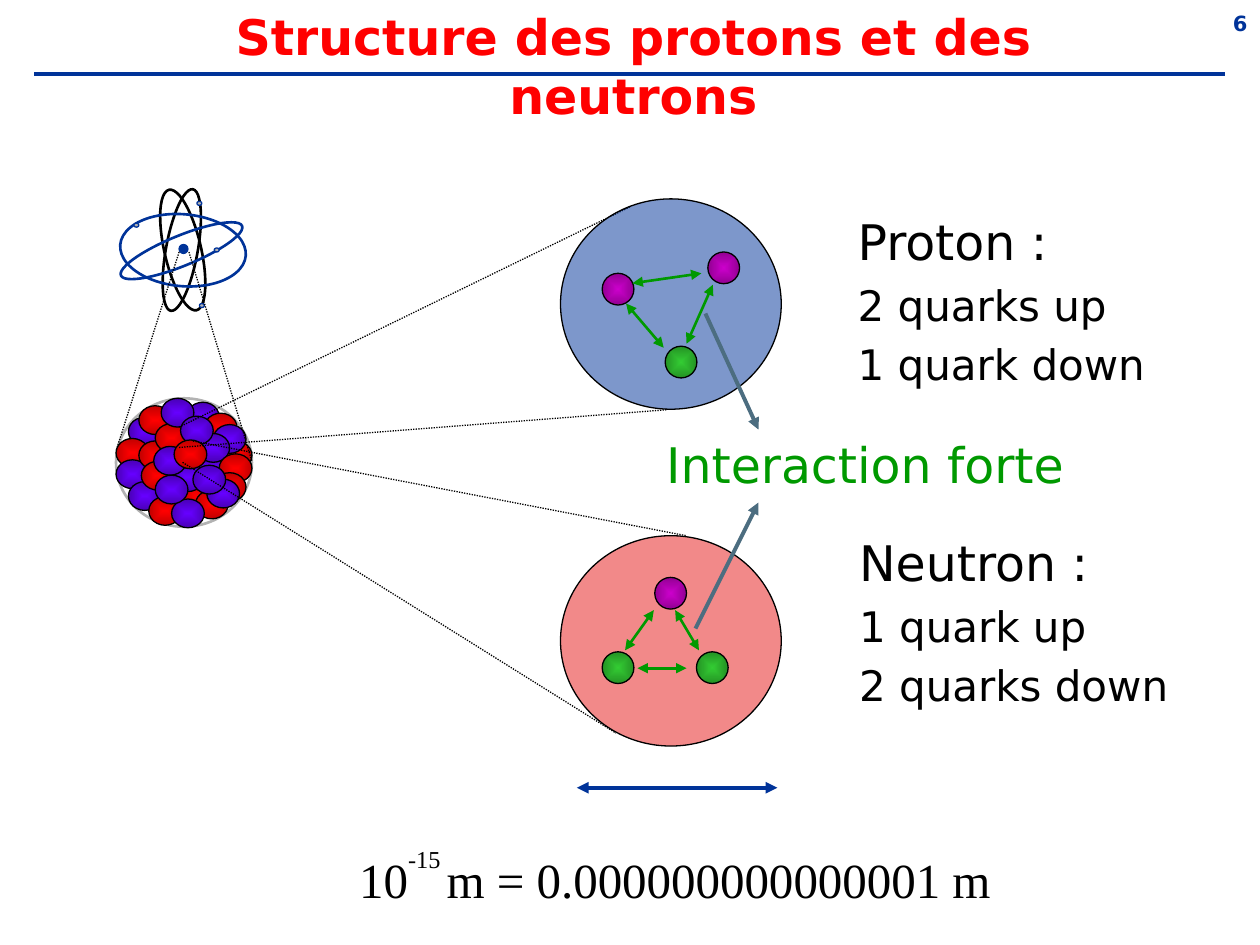
from pptx import Presentation
from pptx.dml.color import RGBColor
from pptx.enum.dml import MSO_LINE
from pptx.enum.shapes import MSO_CONNECTOR, MSO_SHAPE
from pptx.enum.text import MSO_ANCHOR, MSO_AUTO_SIZE, PP_ALIGN
from pptx.oxml import parse_xml
from pptx.oxml.ns import nsdecls, qn
from pptx.util import Cm, Pt

OVAL = MSO_SHAPE.OVAL
STRAIGHT = MSO_CONNECTOR.STRAIGHT
DOTTED = MSO_LINE.ROUND_DOT
TOP, BOTTOM = MSO_ANCHOR.TOP, MSO_ANCHOR.BOTTOM
LEFT, CENTER, RIGHT = PP_ALIGN.LEFT, PP_ALIGN.CENTER, PP_ALIGN.RIGHT
TITLE_ONLY = 5

SANS, SERIF = "DejaVu Sans", "Times New Roman"
BLACK, BLUE, GREY, RED = "000000", "003399", "B2B2B2", "FF0000"
GREEN, SLATE = "009900", "4C6D80"

# Centre and edge colours of the shaded balls
BALLS = {
    "proton": ("6600FF", "4900B6"),
    "neutron": (RED, "C10000"),
    "up": ("CC00CC", "920092"),
    "down": ("33CC33", "249224"),
}
# Balls of the nucleus from back to front, relative to its box
NUCLEONS = [
    ("proton", 0.25, 0.38), ("neutron", 0, 0.81), ("proton", 0, 1.24),
    ("proton", 1.57, 1.17), ("proton", 1.42, 0.08), ("neutron", 0.46, 0.15),
    ("neutron", 0.46, 0.86), ("neutron", 1.32, 1.68), ("neutron", 1.63, 0.46),
    ("neutron", 0.79, 0.51), ("neutron", 2.08, 0.86), ("neutron", 1.78, 0.3),
    ("proton", 0.91, 0), ("proton", 1.96, 0.53), ("proton", 0.25, 1.68),
    ("proton", 1.63, 0.71), ("neutron", 0.51, 1.27), ("neutron", 1.6, 1.85),
    ("neutron", 0.66, 1.98), ("proton", 1.12, 1.3), ("proton", 1.12, 2.03),
    ("proton", 0.76, 0.97), ("neutron", 2.08, 1.12), ("neutron", 1.96, 1.5),
    ("proton", 1.83, 1.63), ("proton", 1.55, 1.35), ("proton", 1.3, 0.36),
    ("proton", 0.79, 1.55), ("neutron", 1.17, 0.84),
]


def color(hex_string):
    return RGBColor.from_string(hex_string)


def add_text(paragraph, text, size=28, font=SANS, fill=BLACK, bold=False, baseline=None):
    run = paragraph.add_run()
    run.text = text
    run.font.size, run.font.name, run.font.bold = Pt(size), font, bold
    run.font.color.rgb = color(fill)
    if baseline:
        run.font._element.set("baseline", str(baseline * 1000))


def add_box(slide, left, top, width, height, lines, align=LEFT, anchor=TOP, **text_format):
    """Text box with one paragraph for each (text, size) pair."""
    shape = slide.shapes.add_textbox(Cm(left), Cm(top), Cm(width), Cm(height))
    frame = shape.text_frame
    frame.word_wrap, frame.vertical_anchor = True, anchor
    for index, (text, size) in enumerate(lines):
        paragraph = frame.add_paragraph() if index else frame.paragraphs[0]
        paragraph.alignment = align
        paragraph.space_before = Pt(5 if index else 0)
        add_text(paragraph, text, size=size, **text_format)
    return frame


def add_oval(slide, left, top, width, height, line=BLACK, weight=0.75, fill=None, opacity=100, rotation=0):
    shape = slide.shapes.add_shape(OVAL, Cm(left), Cm(top), Cm(width), Cm(height))
    shape.shadow.inherit = False
    shape.rotation = rotation
    shape.line.color.rgb, shape.line.width = color(line), Pt(weight)
    if fill is None:
        shape.fill.background()
    else:
        shape.fill.solid()
        shape.fill.fore_color.rgb = color(fill)
    if opacity < 100:
        tint = shape._element.spPr.find(qn("a:solidFill"))[0]
        tint.append(parse_xml(f'<a:alpha {nsdecls("a")} val="{opacity * 1000}"/>'))
    return shape


def add_ball(slide, kind, left, top, width, height):
    """Oval shaded from its centre outwards."""
    shape = add_oval(slide, left, top, width, height)
    shape.fill.gradient()
    for stop, shade in zip(shape.fill.gradient_stops, BALLS[kind]):
        stop.color.rgb = color(shade)
    gradient = shape._element.spPr.find(qn("a:gradFill"))
    gradient.replace(gradient.find(qn("a:lin")), parse_xml(
        f'<a:path {nsdecls("a")} path="shape">'
        '<a:fillToRect l="50000" t="50000" r="50000" b="50000"/></a:path>'))


def add_line(slide, left, top, ends, line=BLACK, weight=0.75, dash=None, arrows=()):
    """Straight line; ends are x1, y1, x2, y2 relative to left and top."""
    x1, y1, x2, y2 = ends
    connector = slide.shapes.add_connector(
        STRAIGHT, Cm(left + x1), Cm(top + y1), Cm(left + x2), Cm(top + y2))
    connector.line.color.rgb, connector.line.width = color(line), Pt(weight)
    if dash:
        connector.line.dash_style = dash
    properties = connector._element.spPr
    for end in arrows:
        properties.find(qn("a:ln")).append(
            parse_xml(f'<a:{end} {nsdecls("a")} type="triangle"/>'))
    properties.append(parse_xml(f'<a:effectLst {nsdecls("a")}/>'))


def draw_header(slide, left, top, width, height):
    # Rule, page number and title
    add_line(slide, left, top, (0.69, 1.5, 24.69, 1.5), line=BLUE, weight=2.25)
    add_box(slide, left + width - 2.34, top, 2.34, 0.84, [("6", 12)],
            align=RIGHT, anchor=BOTTOM, fill=BLUE, bold=True)
    title = slide.shapes.title
    title.left, title.top = Cm(left + 1.93), Cm(top)
    title.width, title.height = Cm(21.67), Cm(height)
    frame = title.text_frame
    frame.word_wrap, frame.auto_size = True, MSO_AUTO_SIZE.NONE
    frame.vertical_anchor = TOP
    frame.margin_left = frame.margin_right = Cm(0.3)
    frame.paragraphs[0].alignment = CENTER
    add_text(frame.paragraphs[0], "Structure des protons et des neutrons", fill=RED, bold=True)


def draw_nucleus(slide, left, top, width, height):
    add_oval(slide, left, top, width, height, line=GREY, weight=1.5)
    for kind, x, y in NUCLEONS:
        add_ball(slide, kind, left + x, top + y, 0.66, 0.58)


def draw_atom(slide, left, top):
    # Orbits, nucleus and electrons
    for x, y, width, height, rotation, line in [
            (0.08, 0.91, 2.49, 0.64, 280.3, BLACK), (0.1, 0.86, 2.49, 0.74, 257.1, BLACK),
            (0, 0.94, 2.64, 0.61, 337.8, BLUE), (0.08, 0.51, 2.54, 1.45, 5.1, BLUE)]:
        add_oval(slide, left + x, top + y, width, height, line=line, weight=1.5, rotation=rotation)
    add_oval(slide, left + 1.27, top + 1.12, 0.18, 0.18, line=BLUE, fill=BLUE)
    for x, y in [(1.63, 0.25), (1.98, 1.19), (0.36, 0.69), (1.68, 2.31)]:
        add_oval(slide, left + x, top + y, 0.1, 0.08, line=BLUE, fill=GREY)


def draw_zoom_lines(slide, left, top):
    # Atom to nucleus, then nucleus to neutron and proton
    for ends in [(1.27, 0.91, 0, 4.92), (1.47, 0.91, 2.74, 5.13),
                 (1.34, 5.15, 10.08, 10.61), (1.55, 4.72, 11.5, 6.63),
                 (1.27, 4.85, 11.1, 4.09), (1.27, 4.44, 10.36, 0)]:
        add_line(slide, left, top, ends, dash=DOTTED)


def draw_hadron(slide, left, top, width, height, fill, quarks, forces):
    add_oval(slide, left, top, width, height, fill=fill, opacity=51)
    for kind, x, y in quarks:
        add_ball(slide, kind, left + x, top + y, 0.64, 0.64)
    for ends in forces:
        add_line(slide, left, top, ends, line=GREEN, weight=1.5, arrows=("headEnd", "tailEnd"))


def draw_interaction(slide, left, top, width, height):
    for ends in [(1.04, -2.32, 2.11, 0.02), (0.84, 4.03, 2.11, 1.49)]:
        add_line(slide, left, top, ends, line=SLATE, weight=2.25, arrows=("tailEnd",))
    add_box(slide, left, top, width, height, [("Interaction forte", 28)], fill=GREEN)


def draw_scale(slide, left, top, width, height):
    # Size arrow and its length
    add_line(slide, left, top, (8.68, 0, 4.64, 0), line=BLUE, weight=2.25,
             arrows=("headEnd", "tailEnd"))
    frame = add_box(slide, left, top + 0.43, width, height - 0.43, [("10", 28)], font=SERIF)
    paragraph = frame.paragraphs[0]
    paragraph.line_spacing = 1.45
    add_text(paragraph, "-15 ", size=24, font=SERIF, baseline=72)
    add_text(paragraph, "m = 0.000000000000001 m", font=SERIF)


def main():
    presentation = Presentation()
    presentation.slide_width, presentation.slide_height = Cm(25.4), Cm(19.05)
    slide = presentation.slides.add_slide(presentation.slide_layouts[TITLE_ONLY])
    draw_header(slide, 0, 0, 25.4, 1.45)
    draw_nucleus(slide, 2.34, 8.03, 2.74, 2.59)
    draw_atom(slide, 2.34, 3.81)
    draw_zoom_lines(slide, 2.34, 4.17)
    draw_hadron(slide, 11.3, 4.01, 4.45, 4.24, BLUE,
                [("down", 2.11, 2.97), ("up", 2.97, 1.07), ("up", 0.84, 1.5)],
                [(1.32, 2.11, 2.08, 3), (2.54, 2.92, 3.07, 1.73), (1.45, 1.7, 2.84, 1.5)])
    draw_hadron(slide, 11.3, 10.8, 4.45, 4.24, "E71919",
                [("down", 0.84, 2.34), ("down", 2.74, 2.34), ("up", 1.9, 0.84)],
                [(1.3, 2.31, 1.88, 1.5), (2.31, 1.5, 2.79, 2.31), (1.55, 2.67, 2.54, 2.67)])
    add_box(slide, 17.04, 4.14, 6.38, 3.89,
            [("Proton :", 28), ("2 quarks up", 24), ("1 quark down", 24)])
    add_box(slide, 17.07, 10.62, 6.81, 3.89,
            [("Neutron :", 28), ("1 quark up", 24), ("2 quarks down", 24)])
    draw_interaction(slide, 13.18, 8.64, 8.64, 1.45)
    draw_scale(slide, 6.99, 15.88, 13.56, 2.41)
    presentation.save("out.pptx")


if __name__ == "__main__":
    main()
